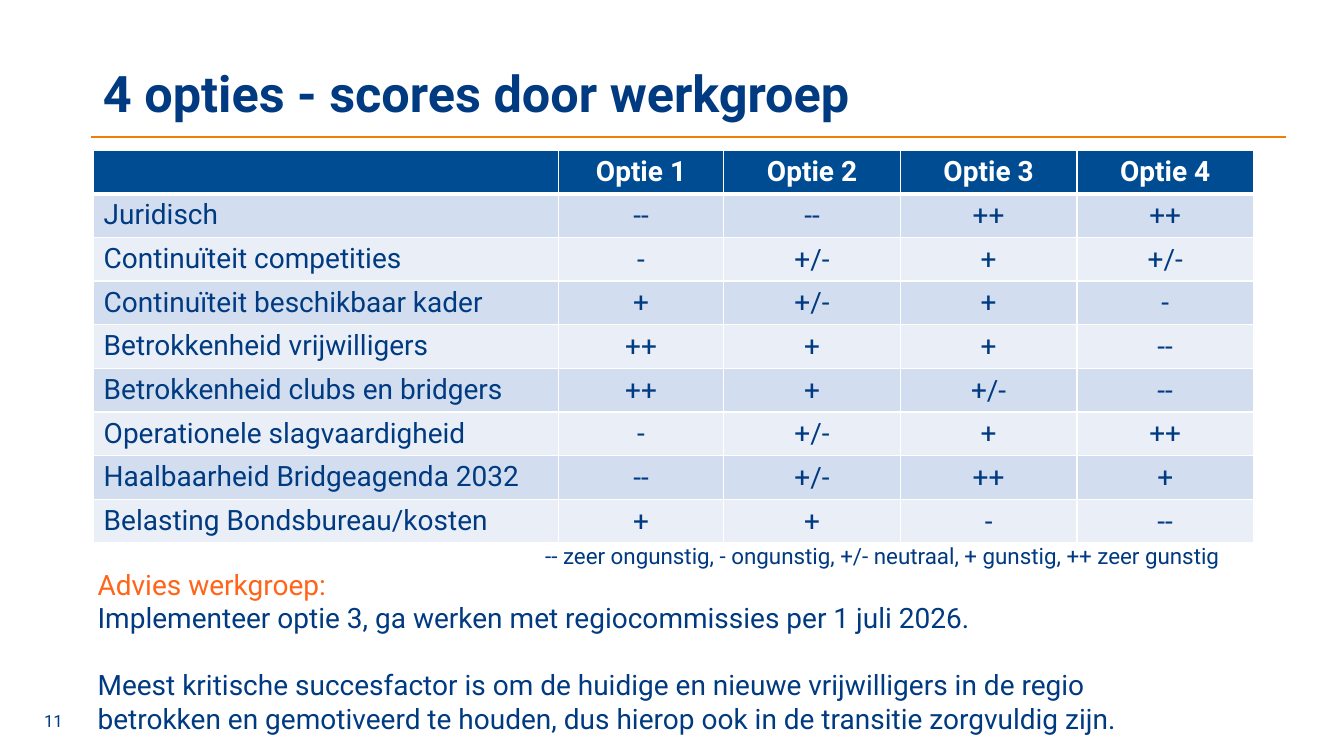
from dataclasses import dataclass

from lxml import etree
from pptx import Presentation
from pptx.dml.color import RGBColor
from pptx.enum.shapes import MSO_CONNECTOR
from pptx.enum.text import MSO_ANCHOR, MSO_AUTO_SIZE, PP_ALIGN
from pptx.oxml.ns import qn
from pptx.slide import Slide
from pptx.util import Cm, Pt

STRAIGHT = MSO_CONNECTOR.STRAIGHT
TOP, MIDDLE = MSO_ANCHOR.TOP, MSO_ANCHOR.MIDDLE
LEFT, CENTER = PP_ALIGN.LEFT, PP_ALIGN.CENTER
NO_AUTOFIT = MSO_AUTO_SIZE.NONE
TITLE_ONLY_LAYOUT = 5


@dataclass(frozen=True)
class Theme:
    font: str = "Roboto"
    navy: str = "003A81"
    header: str = "004C92"
    bands: tuple[str, str] = ("D2DEEF", "EAEFF7")
    white: str = "FFFFFF"
    rule: str = "EF7F01"
    accent: str = "FF6418"
    title_size: int = 36
    body_size: int = 20
    legend_size: int = 16
    number_size: int = 12
    thin_line: int = 1
    rule_line: int = 2
    header_line: int = 3


@dataclass(frozen=True)
class Line:
    text: str
    color: str


@dataclass(frozen=True)
class TextBlock:
    left: float
    top: float
    width: float
    height: float
    size: int
    paragraphs: list[list[Line]]
    anchor: MSO_ANCHOR = TOP
    gap: float = 0


@dataclass(frozen=True)
class Criterion:
    name: str
    scores: tuple[str, str, str, str]


THEME = Theme()
COLUMN_WIDTHS = (11.71, 4.17, 4.45, 4.45, 4.45)
ROW_HEIGHT = 1.1
HEADINGS = ("", "Optie 1", "Optie 2", "Optie 3", "Optie 4")
CRITERIA = [
    Criterion("Juridisch", ("--", "--", "++", "++")),
    Criterion("Continuïteit competities", ("-", "+/-", "+", "+/-")),
    Criterion("Continuïteit beschikbaar kader", ("+", "+/-", "+", "-")),
    Criterion("Betrokkenheid vrijwilligers", ("++", "+", "+", "--")),
    Criterion("Betrokkenheid clubs en bridgers", ("++", "+", "+/-", "--")),
    Criterion("Operationele slagvaardigheid", ("-", "+/-", "+", "++")),
    Criterion("Haalbaarheid Bridgeagenda 2032", ("--", "+/-", "++", "+")),
    Criterion("Belasting Bondsbureau/kosten", ("+", "+", "-", "--")),
]
TEXT_BLOCKS = [
    # Advice
    TextBlock(2.21, 14.17, 27.18, 4.52, THEME.body_size, [
        [Line("Advies werkgroep:", THEME.accent),
         Line("Implementeer optie 3, ga werken met regiocommissies per 1 juli 2026.", THEME.navy)],
        [Line("Meest kritische succesfactor is om de huidige en nieuwe vrijwilligers in de regio", THEME.navy),
         Line("betrokken en gemotiveerd te houden, dus hierop ook in de transitie zorgvuldig zijn.", THEME.navy)],
    ], gap=23.5),
    # Page number
    TextBlock(0.86, 17.65, 7.62, 1.02, THEME.number_size, [[Line("11", THEME.navy)]], MIDDLE),
    # Legend of the scores
    TextBlock(13.49, 13.54, 18.92, 0.94, THEME.legend_size, [
        [Line("-- zeer ongunstig, - ongunstig, +/- neutraal, + gunstig, ++ zeer gunstig", THEME.navy)],
    ]),
]


def add_run(para, text: str, size: int, color: str, bold: bool = False) -> None:
    run = para.add_run()
    run.text = text
    run.font.name = THEME.font
    run.font.size = Pt(size)
    run.font.bold = bold
    run.font.color.rgb = RGBColor.from_string(color)


def add_title(page: Slide, text: str) -> None:
    title = page.shapes.title
    title.left, title.top, title.width, title.height = Cm(2.34), Cm(1.02), Cm(25.68), Cm(2.82)
    frame = title.text_frame
    frame.auto_size = NO_AUTOFIT
    frame.vertical_anchor = MIDDLE
    para = frame.paragraphs[0]
    para.alignment = LEFT
    para.line_spacing = 0.9
    add_run(para, text, THEME.title_size, THEME.navy, bold=True)


def add_title_rule(page: Slide) -> None:
    rule = page.shapes.add_connector(STRAIGHT, Cm(2.29), Cm(3.45), Cm(32.41), Cm(3.45))
    rule.line.color.rgb = RGBColor.from_string(THEME.rule)
    rule.line.width = Pt(THEME.rule_line)
    etree.SubElement(rule._element.spPr, qn("a:effectLst"))


def add_text_block(page: Slide, block: TextBlock) -> None:
    box = page.shapes.add_textbox(Cm(block.left), Cm(block.top), Cm(block.width), Cm(block.height))
    frame = box.text_frame
    frame.word_wrap = True
    frame.vertical_anchor = block.anchor
    for index, lines in enumerate(block.paragraphs):
        para = frame.add_paragraph() if index else frame.paragraphs[0]
        if index:
            para.space_before = Pt(block.gap)
        for position, line in enumerate(lines):
            if position:
                para.add_line_break()
            add_run(para, line.text, block.size, line.color)


def set_borders(cell, top: int, bottom: int) -> None:
    properties = cell._tc.get_or_add_tcPr()
    widths = {"a:lnL": THEME.thin_line, "a:lnR": THEME.thin_line, "a:lnT": top, "a:lnB": bottom}
    for tag, width in widths.items():
        border = etree.SubElement(properties, qn(tag), w=str(Pt(width)))
        fill = etree.SubElement(border, qn("a:solidFill"))
        etree.SubElement(fill, qn("a:srgbClr"), val=THEME.white)


def format_cell(cell, text: str, row: int, column: int) -> None:
    is_header = row == 0
    set_borders(cell,
                top=THEME.header_line if row == 1 else THEME.thin_line,
                bottom=THEME.header_line if is_header else THEME.thin_line)
    cell.fill.solid()
    color = THEME.header if is_header else THEME.bands[(row - 1) % 2]
    cell.fill.fore_color.rgb = RGBColor.from_string(color)
    if row and column:
        cell.vertical_anchor = MIDDLE
        cell.margin_left = cell.margin_right = cell.margin_top = Cm(0.03)
        cell.margin_bottom = Cm(0)
    para = cell.text_frame.paragraphs[0]
    para.alignment = CENTER if column else LEFT
    if text:
        add_run(para, text, THEME.body_size, THEME.white if is_header else THEME.navy, is_header)


def add_score_table(page: Slide) -> None:
    rows = [HEADINGS] + [(criterion.name, *criterion.scores) for criterion in CRITERIA]
    table = page.shapes.add_table(
        len(rows), len(HEADINGS), Cm(2.36), Cm(3.78),
        Cm(sum(COLUMN_WIDTHS)), Cm(ROW_HEIGHT * len(rows))).table
    for column, width in zip(table.columns, COLUMN_WIDTHS):
        column.width = Cm(width)
    for row, texts in enumerate(rows):
        table.rows[row].height = Cm(ROW_HEIGHT)
        for column, text in enumerate(texts):
            format_cell(table.cell(row, column), text, row, column)


def main() -> None:
    deck = Presentation()
    deck.slide_width, deck.slide_height = Cm(33.87), Cm(19.05)
    page = deck.slides.add_slide(deck.slide_layouts[TITLE_ONLY_LAYOUT])
    add_title_rule(page)
    add_title(page, "4 opties - scores door werkgroep")
    add_score_table(page)
    for block in TEXT_BLOCKS:
        add_text_block(page, block)
    deck.save("out.pptx")


if __name__ == "__main__":
    main()
